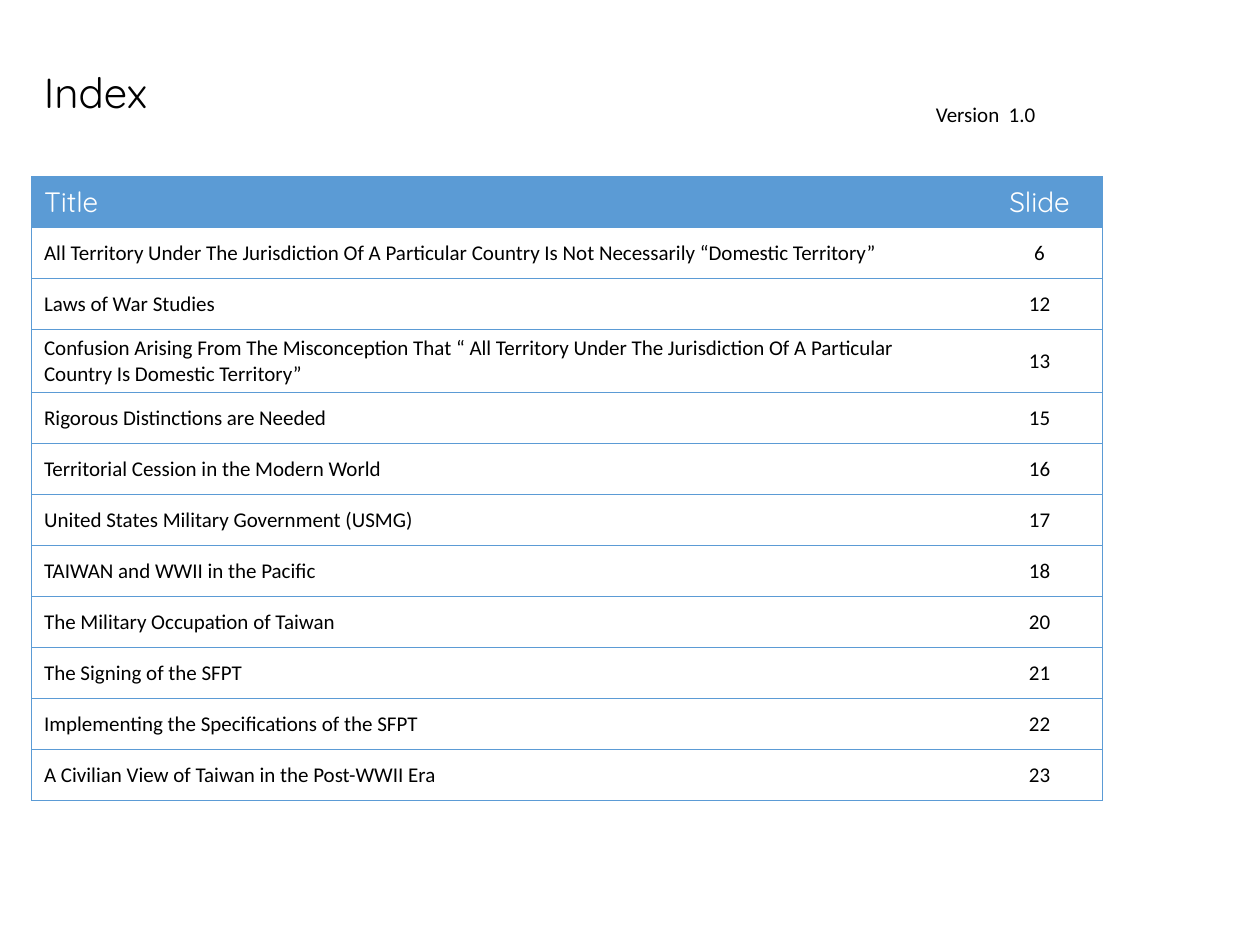
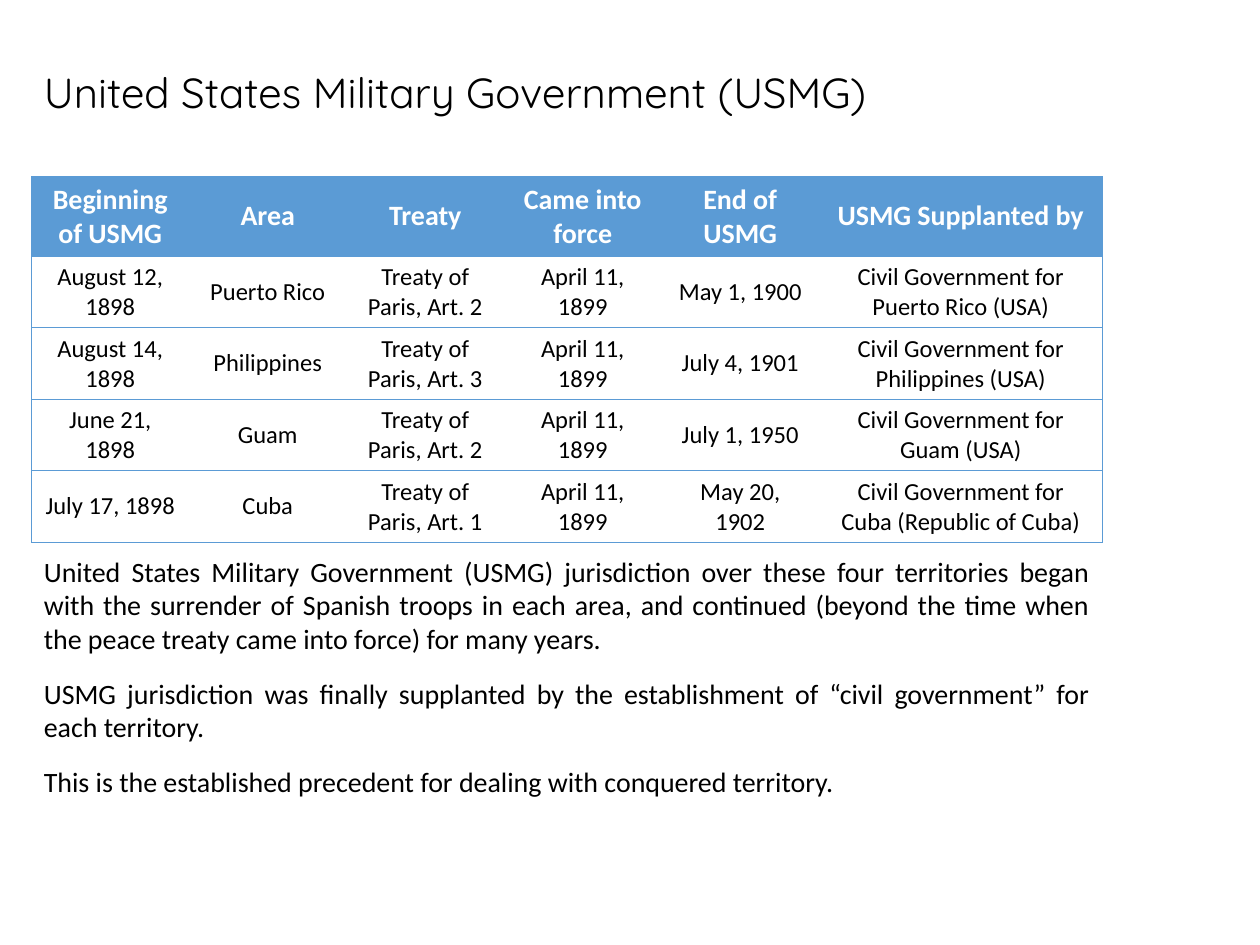
from lxml import etree
from pptx import Presentation
from pptx.dml.color import RGBColor as RGB
from pptx.enum.text import MSO_ANCHOR as ANCHOR, PP_ALIGN as ALIGN
from pptx.oxml.ns import qn
from pptx.util import Inches, Pt

COLORS = {"accent": "5B9BD5", "text": "000000", "light": "FFFFFF"}
HEAD_FONT, BODY_FONT = "Quicksand", "Calibri"
TITLE_BOX = (0.25, 0.25, 8.5, 1)
TABLE_LEFT, TABLE_TOP, TABLE_WIDTH = 0.25, 1.4, 8.5
ROW_HEIGHT = Inches(4.86) // 12

INDEX_ROWS = [
    ("Title", "Slide"),
    ("All Territory Under The Jurisdiction Of A Particular Country Is Not Necessarily “Domestic Territory”", "6"),
    ("Laws of War Studies", "12"),
    ("Confusion Arising From The Misconception That “ All Territory Under The Jurisdiction Of A Particular "
     "Country Is Domestic Territory”", "13"),
    ("Rigorous Distinctions are Needed", "15"),
    ("Territorial Cession in the Modern World", "16"),
    ("United States Military Government (USMG)", "17"),
    ("TAIWAN and WWII in the Pacific", "18"),
    ("The Military Occupation of Taiwan", "20"),
    ("The Signing of the SFPT", "21"),
    ("Implementing the Specifications of the SFPT", "22"),
    ("A Civilian View of Taiwan in the Post-WWII Era", "23"),
]

USMG_ROWS = [
    ("Beginning of USMG", "Area", "Treaty", "Came into force", "End of USMG", "USMG Supplanted by"),
    ("August 12, 1898", "Puerto Rico", "Treaty of Paris, Art. 2", "April 11, 1899", "May 1, 1900",
     "Civil Government for Puerto Rico (USA)"),
    ("August 14, 1898", "Philippines", "Treaty of Paris, Art. 3", "April 11, 1899", "July 4, 1901",
     "Civil Government for Philippines (USA)"),
    ("June 21, 1898", "Guam", "Treaty of Paris, Art. 2", "April 11, 1899", "July 1, 1950",
     "Civil Government for Guam (USA)"),
    ("July 17, 1898", "Cuba", "Treaty of Paris, Art. 1", "April 11, 1899", "May 20, 1902",
     "Civil Government for Cuba (Republic of Cuba)"),
]

USMG_NOTES = [
    "United States Military Government (USMG) jurisdiction over these four territories began with the "
    "surrender of Spanish troops in each area, and continued (beyond the time when the peace treaty came "
    "into force) for many years.",
    "USMG jurisdiction was finally supplanted by the establishment of “civil government” for each territory.",
    "This is the established precedent for dealing with conquered territory.",
]


def write(p, text, size, font=BODY_FONT, color="text", bold=False, align=ALIGN.LEFT):
    p.alignment = align
    r = p.add_run()
    r.text = text
    r.font.size, r.font.name, r.font.bold = Pt(size), font, bold
    r.font.color.rgb = RGB.from_string(COLORS[color])


def add_text_frame(s, box, anchor=ANCHOR.TOP):
    tf = s.shapes.add_textbox(*map(Inches, box)).text_frame
    tf.word_wrap = True
    tf.vertical_anchor = anchor
    return tf


def add_titled_slide(prs, title):
    s = prs.slides.add_slide(prs.slide_layouts[6])
    p = add_text_frame(s, TITLE_BOX, ANCHOR.MIDDLE).paragraphs[0]
    p.line_spacing = 0.9
    write(p, title, 24, HEAD_FONT)
    return s


def set_borders(cell, sides):
    """Draw accent lines on the given sides (of L, R, T, B) and none on the others."""
    tc_pr = cell._tc.get_or_add_tcPr()
    for side in "LRTB":
        ln = etree.SubElement(tc_pr, qn(f"a:ln{side}"), w=str(Pt(0.5)))
        if side in sides:
            fill = etree.SubElement(ln, qn("a:solidFill"))
            etree.SubElement(fill, qn("a:srgbClr"), val=COLORS["accent"])
        else:
            etree.SubElement(ln, qn("a:noFill"))


def add_ruled_table(s, rows, col_widths, head_style, body_size, aligns):
    """Table with a filled header, lines between rows and an outer frame."""
    table = s.shapes.add_table(len(rows), len(col_widths), Inches(TABLE_LEFT), Inches(TABLE_TOP),
                               Inches(TABLE_WIDTH), ROW_HEIGHT * len(rows)).table
    table.horz_banding = False
    for column, width in zip(table.columns, col_widths):
        column.width = Inches(width)
    last = len(col_widths) - 1
    for i, row in enumerate(rows):
        for j, text in enumerate(row):
            cell = table.cell(i, j)
            cell.vertical_anchor = ANCHOR.MIDDLE
            set_borders(cell, "TB" + "L" * (j == 0) + "R" * (j == last))
            if i == 0:
                cell.fill.solid()
                cell.fill.fore_color.rgb = RGB.from_string(COLORS["accent"])
                style = dict(size=16, color="light", **head_style)
            else:
                cell.fill.background()
                style = dict(size=body_size)
            write(cell.text_frame.paragraphs[0], text, align=aligns[j], **style)


def add_notes(s, box, notes):
    tf = add_text_frame(s, box)
    for i, text in enumerate(notes):
        p = tf.add_paragraph() if i else tf.paragraphs[0]
        p.space_before, p.space_after = Pt(6 if i else 0), Pt(6)
        write(p, text, 16, align=ALIGN.JUSTIFY)


def index_slide(prs):
    s = add_titled_slide(prs, "Index")
    add_ruled_table(s, INDEX_ROWS, [7.5, 1], dict(font=HEAD_FONT), 12, [ALIGN.LEFT, ALIGN.CENTER])
    write(add_text_frame(s, (7.33, 0.76, 1.28, 0.3)).paragraphs[0], "Version  1.0", 12)


def usmg_slide(prs):
    s = add_titled_slide(prs, "United States Military Government (USMG)")
    add_ruled_table(s, USMG_ROWS, [1.25] * 5 + [2.25], dict(bold=True), 14, [ALIGN.CENTER] * 6)
    add_notes(s, (0.25, 4.35, 8.5, 2), USMG_NOTES)


def main():
    prs = Presentation()
    prs.slide_width, prs.slide_height = Inches(10), Inches(7.5)
    index_slide(prs)
    usmg_slide(prs)
    prs.save("out.pptx")


if __name__ == "__main__":
    main()
